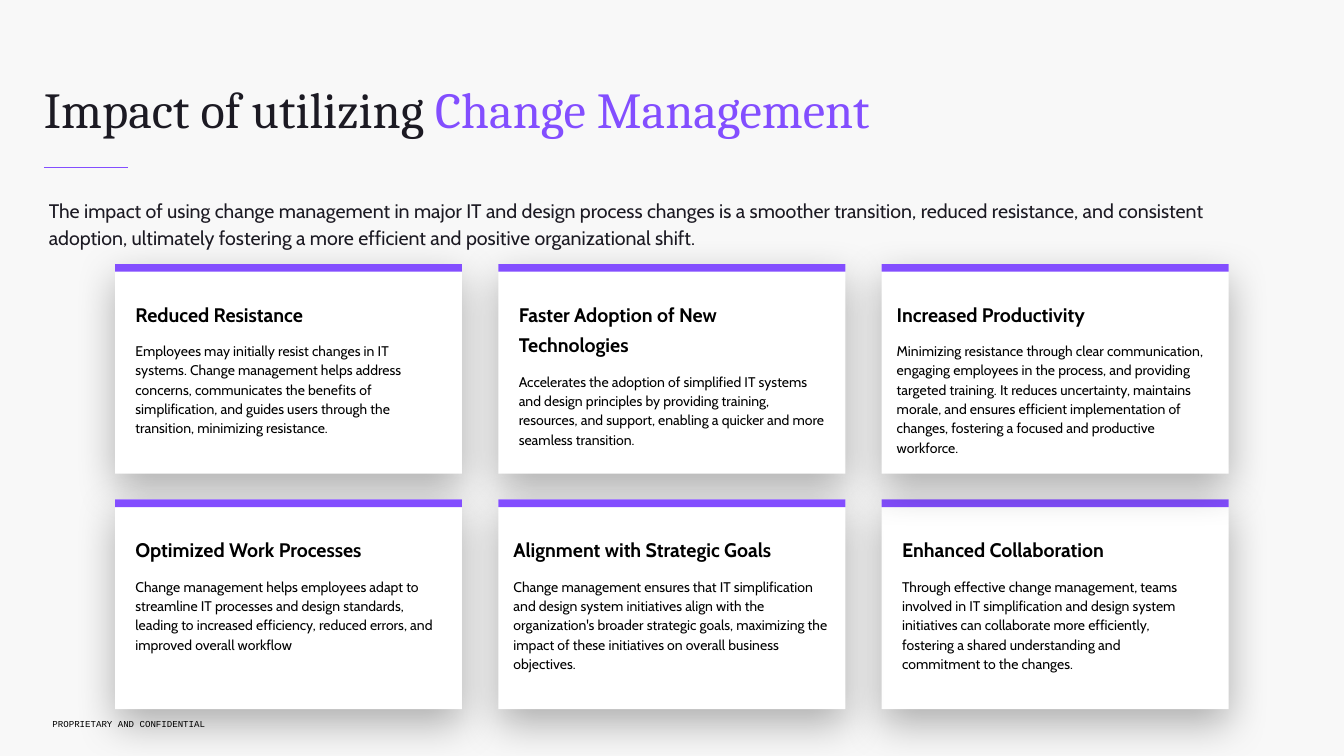
import pptx
import pptx.util
import pptx.dml.color
import pptx.enum.shapes
import pptx.enum.text
import pptx.oxml
import pptx.oxml.ns

Pt = pptx.util.Pt

PURPLE, INK, BLACK, WHITE, PAPER = "834EFF", "1C1A23", "000000", "FFFFFF", "F8F8F8"

TITLE = [("Impact of utilizing ", INK), ("Change Management", PURPLE)]
SUMMARY = (
    "The impact of using change management in major IT and design process changes is a "
    "smoother transition, reduced resistance, and consistent adoption, ultimately fostering "
    "a more efficient and positive organizational shift."
)
FOOTER = "PROPRIETARY AND CONFIDENTIAL"

# column, row, text indent, text width, heading, body
CARDS = [
    (0, 0, 22, 453, "Reduced Resistance",
     "Employees may initially resist changes in IT systems. Change management helps address "
     "concerns, communicates the benefits of simplification, and guides users through the "
     "transition, minimizing resistance."),
    (1, 0, 22, 459, "Faster Adoption of New Technologies",
     "Accelerates the adoption of simplified IT systems and design principles by providing "
     "training, resources, and support, enabling a quicker and more seamless transition."),
    (2, 1, 22, 428, "Enhanced Collaboration",
     "Through effective change management, teams involved in IT simplification and design "
     "system initiatives can collaborate more efficiently, fostering a shared understanding "
     "and commitment to the changes."),
    (2, 0, 14.4, 473, "Increased Productivity",
     "Minimizing resistance through clear communication, engaging employees in the process, "
     "and providing targeted training. It reduces uncertainty, maintains morale, and ensures "
     "efficient implementation of changes, fostering a focused and productive workforce."),
    (0, 1, 22, 452, "Optimized Work Processes",
     "Change management helps employees adapt to streamline IT processes and design "
     "standards, leading to increased efficiency, reduced errors, and improved overall workflow"),
    (1, 1, 14.4, 472, "Alignment with Strategic Goals",
     "Change management ensures that IT simplification and design system initiatives align "
     "with the organization's broader strategic goals, maximizing the impact of these "
     "initiatives on overall business objectives."),
]

GRID_LEFT, GRID_TOP = 164.4, 377.2
COLUMN_STEP, ROW_STEP = 547.6, 336.4
CARD_WIDTH, CARD_HEIGHT, BAR_HEIGHT = 495.6, 299.4, 11
TEXT_DROP, TEXT_HEIGHT = 37.8, 240

SHADOW = (
    '<a:effectLst xmlns:a="http://schemas.openxmlformats.org/drawingml/2006/main">'
    '<a:outerShdw blurRad="{blur}" dist="{distance}" dir="5400000" algn="t" rotWithShape="0">'
    '<a:srgbClr val="000000"><a:alpha val="30000"/></a:srgbClr>'
    '</a:outerShdw></a:effectLst>'
).format(blur=Pt(60), distance=Pt(20))


def color(value):
    return pptx.dml.color.RGBColor.from_string(value)


def add_box(shapes, left, top, width, height, inset=0):
    box = shapes.add_textbox(Pt(left), Pt(top), Pt(width), Pt(height))
    frame = box.text_frame
    frame.word_wrap = True
    frame.margin_left = frame.margin_right = Pt(inset)
    frame.margin_top = frame.margin_bottom = Pt(inset)
    return frame


def add_span(para, text, font, size, value, bold=False):
    span = para.add_run()
    span.text = text
    span.font.name = font
    span.font.size = Pt(size)
    span.font.bold = bold
    span.font.color.rgb = color(value)


def add_block(shapes, left, top, width, height, value):
    block = shapes.add_shape(pptx.enum.shapes.MSO_SHAPE.RECTANGLE,
                             Pt(left), Pt(top), Pt(width), Pt(height))
    block.shadow.inherit = False
    block.fill.solid()
    block.fill.fore_color.rgb = color(value)
    block.line.fill.background()
    return block


def add_card(page, column, row, indent, width, heading, body):
    left = GRID_LEFT + column * COLUMN_STEP
    top = GRID_TOP + row * ROW_STEP
    shapes = page.shapes.add_group_shape().shapes
    panel = add_block(shapes, left, top, CARD_WIDTH, CARD_HEIGHT, WHITE)
    properties = panel.element.spPr
    properties.replace(properties.find(pptx.oxml.ns.qn("a:effectLst")),
                       pptx.oxml.parse_xml(SHADOW))
    add_block(shapes, left, top, CARD_WIDTH, BAR_HEIGHT, PURPLE)

    frame = add_box(shapes, left + indent, top + TEXT_DROP, width, TEXT_HEIGHT, 7.2)
    para = frame.paragraphs[0]
    para.line_spacing = 1.3
    add_span(para, heading, "Cabin", 28, BLACK, True)
    para = frame.add_paragraph()
    para.line_spacing = 1.15
    para.space_before = Pt(20)
    add_span(para, body, "Cabin", 20, BLACK)


def main():
    deck = pptx.Presentation()
    deck.slide_width, deck.slide_height = Pt(1920), Pt(1080)
    page = deck.slides.add_slide(deck.slide_layouts[6])
    page.background.fill.solid()
    page.background.fill.fore_color.rgb = color(PAPER)

    frame = add_box(page.shapes, 75, 1018.8, 418, 28)
    frame.vertical_anchor = pptx.enum.text.MSO_ANCHOR.MIDDLE
    para = frame.paragraphs[0]
    para.line_spacing = 1.15
    add_span(para, FOOTER, "Courier New", 13, BLACK)

    para = add_box(page.shapes, 62.6, 116.6, 1675, 111.6).paragraphs[0]
    para.line_spacing = 0.97
    for text, value in TITLE:
        add_span(para, text, "Cambria", 72, value)

    para = add_box(page.shapes, 62.6, 272.2, 1734.5, 88, 7.2).paragraphs[0]
    para.line_spacing = 1.15
    add_span(para, SUMMARY, "Cabin", 28, INK)

    rule = page.shapes.add_connector(pptx.enum.shapes.MSO_CONNECTOR.STRAIGHT,
                                     Pt(62.6), Pt(239), Pt(183), Pt(239))
    rule.line.color.rgb = color(PURPLE)
    rule.line.width = Pt(1)
    pptx.oxml.ns.qn("a:effectLst")
    rule.element.spPr.append(pptx.oxml.parse_xml(
        '<a:effectLst xmlns:a="http://schemas.openxmlformats.org/drawingml/2006/main"/>'))

    for card in CARDS:
        add_card(page, *card)

    deck.save("out.pptx")


if __name__ == "__main__":
    main()
